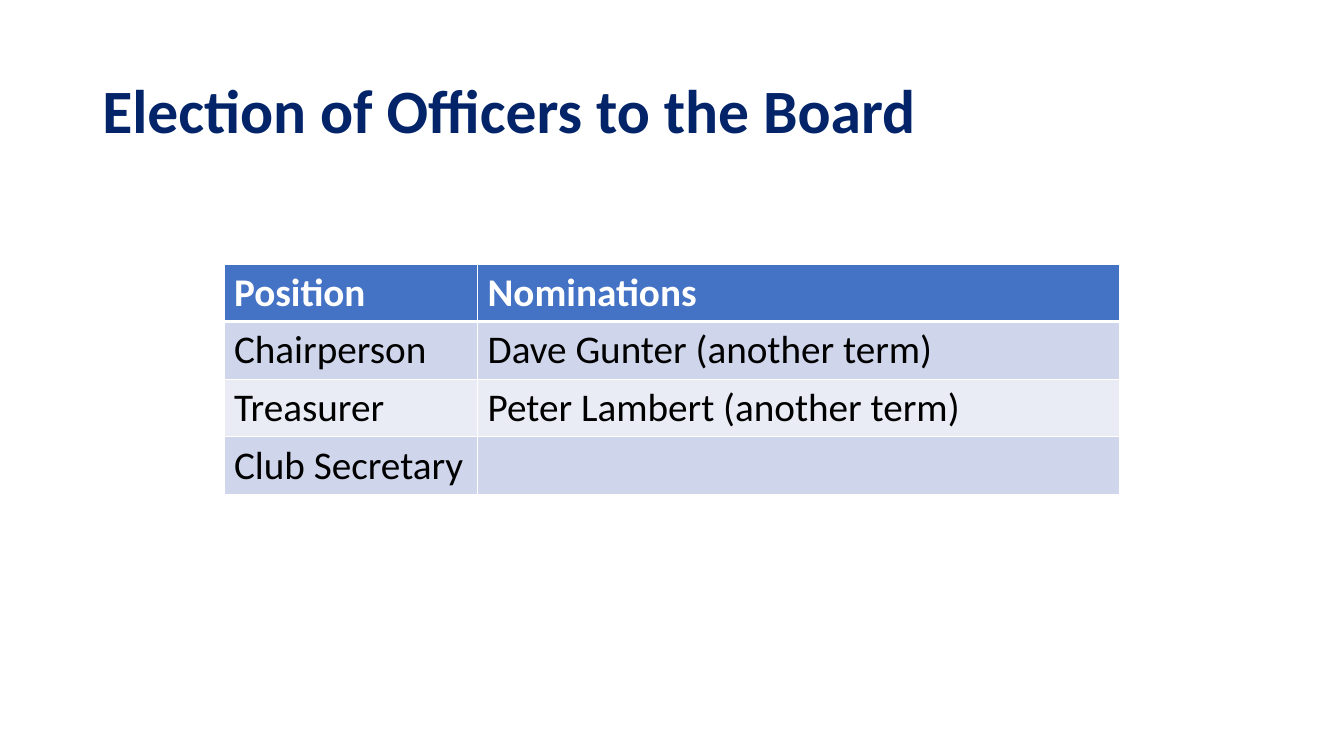
import pptx
import pptx.dml.color
import pptx.enum.text
import pptx.oxml
import pptx.oxml.ns
import pptx.util

Pt = pptx.util.Pt

COLORS = {
    "title": "032469",
    "header": "4472C4",
    "band_dark": "CFD5EA",
    "band_light": "E9EBF5",
    "text": "000000",
    "white": "FFFFFF",
}


class SlideBuilder:
    font_name = "Calibri"

    def __init__(self, slide):
        self.slide = slide

    def color(self, key):
        return pptx.dml.color.RGBColor.from_string(COLORS[key])

    def style(self, paragraph, size, color, bold):
        font = paragraph.font
        font.name = self.font_name
        font.size = Pt(size)
        font.bold = bold
        font.color.rgb = self.color(color)

    def title(self, text, left, top, width, height):
        frame = self.slide.shapes.add_textbox(
            Pt(left), Pt(top), Pt(width), Pt(height)).text_frame
        frame.word_wrap = True
        frame.vertical_anchor = pptx.enum.text.MSO_ANCHOR.MIDDLE
        heading = frame.paragraphs[0]
        heading.text = text
        heading.line_spacing = 0.9
        self.style(heading, 44, "title", True)

    def cell_borders(self, cell, widths):
        """Draw white borders; widths maps L, R, T and B, in that order, to points."""
        properties = cell._tc.get_or_add_tcPr()
        for side, width in widths.items():
            properties.append(pptx.oxml.parse_xml(
                f'<a:ln{side} {pptx.oxml.ns.nsdecls("a")} w="{Pt(width)}">'
                f'<a:solidFill><a:srgbClr val="{COLORS["white"]}"/></a:solidFill>'
                f'</a:ln{side}>'))

    def table(self, rows, left, top, column_widths, row_height):
        """Add a table whose first row is the header and whose body rows are banded."""
        table = self.slide.shapes.add_table(
            len(rows), len(column_widths), Pt(left), Pt(top),
            Pt(sum(column_widths)), Pt(row_height * len(rows))).table
        table.horz_banding = False
        for column, width in zip(table.columns, column_widths):
            column.width = Pt(width)
        for r, texts in enumerate(rows):
            table.rows[r].height = Pt(row_height)
            is_header = r == 0
            band = "band_dark" if r % 2 else "band_light"
            borders = {"L": 1, "R": 1, "T": 3 if r == 1 else 1, "B": 3 if is_header else 1}
            for c, text in enumerate(texts):
                cell = table.cell(r, c)
                self.cell_borders(cell, borders)
                cell.fill.solid()
                cell.fill.fore_color.rgb = self.color("header" if is_header else band)
                cell.text = text
                self.style(cell.text_frame.paragraphs[0], 28,
                           "white" if is_header else "text", is_header)


def main():
    presentation = pptx.Presentation()
    presentation.slide_width = Pt(960)
    presentation.slide_height = Pt(540)
    builder = SlideBuilder(presentation.slides.add_slide(presentation.slide_layouts[6]))
    builder.title("Election of Officers to the Board", 66, 28.8, 828, 104.4)
    nominations = [
        ("Position", "Nominations"),
        ("Chairperson", "Dave Gunter (another term)"),
        ("Treasurer", "Peter Lambert (another term)"),
        ("Club Secretary", ""),
    ]
    builder.table(nominations, left=160, top=188.5,
                  column_widths=(181.2, 458.8), row_height=41.2)
    presentation.save("out.pptx")


if __name__ == "__main__":
    main()
